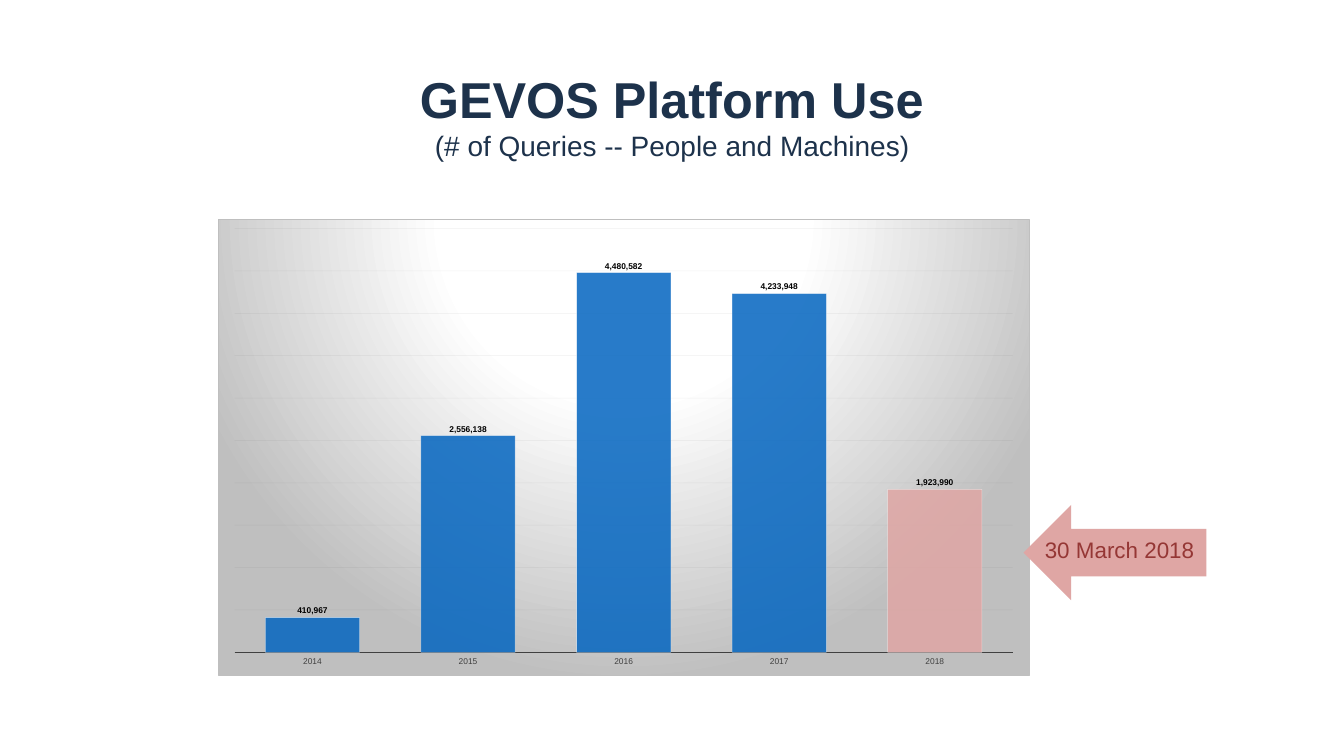
from lxml.etree import SubElement
from pptx import Presentation
from pptx.chart.data import CategoryChartData
from pptx.dml.color import RGBColor
from pptx.enum.chart import XL_CHART_TYPE as ChartType
from pptx.enum.chart import XL_LABEL_POSITION as LabelPosition
from pptx.enum.chart import XL_TICK_LABEL_POSITION as TickLabelPosition
from pptx.enum.chart import XL_TICK_MARK as TickMark
from pptx.enum.shapes import MSO_SHAPE as Shape
from pptx.enum.text import MSO_ANCHOR as Anchor
from pptx.enum.text import PP_ALIGN as Align
from pptx.oxml import parse_xml
from pptx.oxml.ns import nsdecls, qn
from pptx.util import Cm, Pt

FONT = "Arial"
COLOURS = {
    "navy": "1D324B", "bar": "0365C0", "highlight": "DFA6A4", "date": "953735",
    "axis": "404040", "grid": "0D0D0D", "label": "000000",
    "white": "FFFFFF", "grey": "BFBFBF",
}
TITLE = [("GEVOS Platform Use", 72, True),
         ("(# of Queries -- People and Machines)", 40, False)]
DATE = [("30 March 2018", 32, False)]
QUERIES = {"2014": 410967, "2015": 2556138, "2016": 4480582,
           "2017": 4233948, "2018": 1923990}
HIGHLIGHTED_YEAR = "2018"
NUMBER_FORMAT = "#,##0"

# left, top, width, height in centimetres
TITLE_BOX = (4.7, 2.64, 58.34, 6.35)
CHART_BOX = (11, 11.05, 40.87, 22.99)
ARROW_BOX = (51.59, 25.45, 9.22, 4.8)
DATE_BOX = (51.97, 26.9, 8.92, 1.63)

# shares of the chart area
PLOT_LAYOUT = {"x": 0.02, "y": 0.02, "w": 0.96, "h": 0.93}
# opacity in percent
OPACITY = {
    "//c:ser/c:spPr/a:solidFill/a:srgbClr": 85,
    "//c:ser//c:spPr/a:ln/a:solidFill/a:srgbClr": 50,
    "//c:majorGridlines//a:srgbClr": 5,
}


def colour(name):
    return RGBColor.from_string(COLOURS[name])


def box(lengths):
    return [Cm(length) for length in lengths]


def style_font(font, size, name, bold=False):
    font.name, font.size, font.bold = FONT, Pt(size), bold
    font.color.rgb = colour(name)


def style_line(line, name, width):
    line.color.rgb = colour(name)
    line.width = Pt(width)


def add_text(shapes, place, lines, name, margin):
    """Add a centred text box whose lines share one paragraph."""
    frame = shapes.add_textbox(*box(place)).text_frame
    frame.word_wrap = True
    frame.vertical_anchor = Anchor.MIDDLE
    frame.margin_left = frame.margin_right = Cm(margin)
    paragraph = frame.paragraphs[0]
    paragraph.alignment = Align.CENTER
    for index, (text, size, bold) in enumerate(lines):
        if index:
            paragraph.add_line_break()
        run = paragraph.add_run()
        run.text = text
        style_font(run.font, size, name, bold)


def set_chart_background(chart):
    """Give the chart area a round gradient and a thin border."""
    stops = "".join(
        f'<a:gs pos="{position * 1000}"><a:srgbClr val="{COLOURS[name]}"/></a:gs>'
        for position, name in [(0, "white"), (39, "white"), (100, "grey")])
    properties = parse_xml(
        f'<c:spPr {nsdecls("c", "a")}><a:gradFill><a:gsLst>{stops}</a:gsLst>'
        '<a:path path="circle"><a:fillToRect l="50000" t="-80000" r="50000" b="180000"/>'
        f'</a:path></a:gradFill><a:ln w="{Pt(0.75)}"><a:solidFill>'
        f'<a:srgbClr val="{COLOURS["grey"]}"/></a:solidFill></a:ln></c:spPr>')
    chart.element.find(qn("c:chart")).addnext(properties)


def set_plot_layout(chart):
    plot_area = chart.element.find(".//" + qn("c:plotArea"))
    for layout in plot_area.findall(qn("c:layout")):
        plot_area.remove(layout)
    modes = "".join(f'<c:{side}Mode val="edge"/>' for side in "xy")
    sizes = "".join(f'<c:{key} val="{share}"/>' for key, share in PLOT_LAYOUT.items())
    plot_area.insert(0, parse_xml(
        f'<c:layout {nsdecls("c")}><c:manualLayout><c:layoutTarget val="inner"/>'
        f'{modes}{sizes}</c:manualLayout></c:layout>'))


def add_queries_chart(shapes):
    data = CategoryChartData(number_format=NUMBER_FORMAT)
    data.categories = list(QUERIES)
    data.add_series("Series 1", list(QUERIES.values()))
    chart = shapes.add_chart(ChartType.COLUMN_CLUSTERED, *box(CHART_BOX), data).chart
    chart.has_legend = chart.has_title = False
    style_font(chart.font, 10, "label")

    years = chart.category_axis
    years.major_tick_mark = years.minor_tick_mark = TickMark.NONE
    years.tick_label_position = TickLabelPosition.LOW
    style_font(years.tick_labels.font, 12, "axis")
    style_line(years.format.line, "axis", 1.5)

    values = chart.value_axis
    values.visible = False
    values.minimum_scale, values.maximum_scale = 0, 5_000_000
    values.major_unit = 500_000
    values.has_major_gridlines = True
    values.tick_labels.number_format = NUMBER_FORMAT
    values.tick_labels.number_format_is_linked = False
    style_line(values.major_gridlines.format.line, "grid", 0.75)

    plot = chart.plots[0]
    plot.gap_width = 65
    plot.vary_by_categories = False
    series = plot.series[0]
    series.invert_if_negative = False
    point = series.points[list(QUERIES).index(HIGHLIGHTED_YEAR)]
    for part, name in [(series, "bar"), (point, "highlight")]:
        part.format.fill.solid()
        part.format.fill.fore_color.rgb = colour(name)
        style_line(part.format.line, "white", 0.75)

    labels = series.data_labels
    labels.show_value = True
    labels.position = LabelPosition.OUTSIDE_END
    labels.number_format = NUMBER_FORMAT
    labels.number_format_is_linked = False
    style_font(labels.font, 12, "label", True)

    for query, percent in OPACITY.items():
        for element in chart.element.xpath(query):
            SubElement(element, qn("a:alpha")).set("val", str(percent * 1000))
    set_plot_layout(chart)
    set_chart_background(chart)


def add_date_arrow(shapes):
    group = shapes.add_group_shape()
    arrow = group.shapes.add_shape(Shape.LEFT_ARROW, *box(ARROW_BOX))
    arrow.shadow.inherit = False
    arrow.fill.solid()
    arrow.fill.fore_color.rgb = colour("highlight")
    arrow.line.fill.background()
    add_text(group.shapes, DATE_BOX, DATE, "date", 0.25)


def main():
    presentation = Presentation()
    presentation.slide_width, presentation.slide_height = Cm(67.74), Cm(38.1)
    slide = presentation.slides.add_slide(presentation.slide_layouts[6])
    add_text(slide.shapes, TITLE_BOX, TITLE, "navy", 0.15)
    add_queries_chart(slide.shapes)
    add_date_arrow(slide.shapes)
    presentation.save("out.pptx")


if __name__ == "__main__":
    main()
